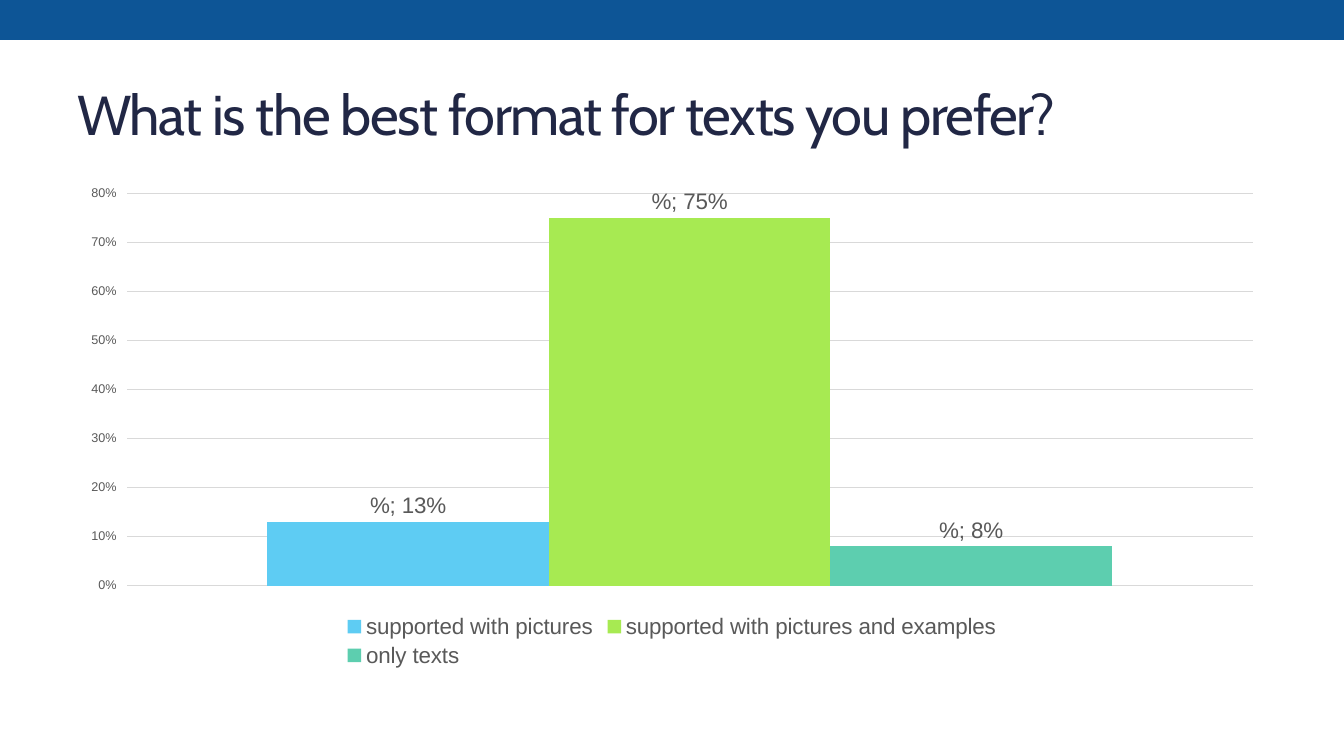
from dataclasses import dataclass

from lxml import etree
from pptx import Presentation
from pptx import util as u
from pptx.chart import data as chart_data
from pptx.dml.color import RGBColor
from pptx.enum import chart as ch
from pptx.enum import shapes, text
from pptx.oxml.ns import qn

EMU_PER_PX = 9525


@dataclass(frozen=True)
class Theme:
    band: str = "0D5596"
    title: str = "212745"
    label: str = "595959"
    grid: str = "D9D9D9"
    title_font: str = "Cabin"
    chart_font: str = "Arial"
    title_size: int = 40
    label_size: int = 16
    axis_size: int = 9


THEME = Theme()
ANSWERS = [
    ("supported with pictures", 0.13, "5ECCF3"),
    ("supported with pictures and examples", 0.75, "A7EA52"),
    ("only texts", 0.08, "5DCEAF"),
]


def px(*lengths):
    return [u.Emu(length * EMU_PER_PX) for length in lengths]


def set_font(font, name, size, color):
    font.name = name
    font.size = u.Pt(size)
    font.color.rgb = RGBColor.from_string(color)


def set_chart_font(font, size):
    set_font(font, THEME.chart_font, size, THEME.label)


def add_band(page, box):
    band = page.shapes.add_shape(shapes.MSO_SHAPE.RECTANGLE, *px(*box))
    band.shadow.inherit = False
    band.fill.solid()
    band.fill.fore_color.rgb = RGBColor.from_string(THEME.band)
    band.line.fill.background()


def add_title(page, box, wording):
    frame = page.shapes.add_textbox(*px(*box)).text_frame
    frame.word_wrap = True
    frame.vertical_anchor = text.MSO_ANCHOR.MIDDLE
    para = frame.paragraphs[0]
    span = para.add_run()
    span.text = wording
    set_font(para.font, THEME.title_font, THEME.title_size, THEME.title)
    # Tighten the letters by one point
    span._r.get_or_add_rPr().set("spc", "-100")


def style_axes(chart):
    chart.category_axis.visible = False
    axis = chart.value_axis
    axis.minimum_scale, axis.maximum_scale, axis.major_unit = 0, 0.8, 0.1
    axis.major_tick_mark = ch.XL_TICK_MARK.OUTSIDE
    axis.format.line.fill.background()
    axis.tick_labels.number_format = "0%"
    axis.tick_labels.number_format_is_linked = False
    set_chart_font(axis.tick_labels.font, THEME.axis_size)
    grid = axis.major_gridlines.format.line
    grid.color.rgb = RGBColor.from_string(THEME.grid)
    grid.width = u.Pt(0.75)


def style_series(series, color):
    series.format.fill.solid()
    series.format.fill.fore_color.rgb = RGBColor.from_string(color)
    labels = series.data_labels
    labels.show_value = labels.show_category_name = True
    labels.number_format = "0%"
    labels.number_format_is_linked = False
    labels.position = ch.XL_LABEL_POSITION.OUTSIDE_END
    set_chart_font(labels.font, THEME.label_size)
    # Separator between category and value
    separator = etree.Element(qn("c:separator"))
    separator.text = "; "
    labels._element.find(qn("c:showBubbleSize")).addnext(separator)


def add_answer_chart(page, box):
    data = chart_data.CategoryChartData(number_format="0%")
    data.categories = ["%"]
    for name, share, _ in ANSWERS:
        data.add_series(name, [share])
    chart = page.shapes.add_chart(
        ch.XL_CHART_TYPE.COLUMN_CLUSTERED, *px(*box), data).chart
    chart.has_title = False
    set_chart_font(chart.font, THEME.label_size)
    style_axes(chart)

    # Columns
    plot = chart.plots[0]
    plot.gap_width, plot.overlap = 100, 0
    plot.vary_by_categories = False
    for series, (_, _, color) in zip(plot.series, ANSWERS):
        style_series(series, color)

    # Legend
    chart.has_legend = True
    chart.legend.position = ch.XL_LEGEND_POSITION.BOTTOM
    chart.legend.include_in_layout = False
    set_chart_font(chart.legend.font, THEME.label_size)


def main():
    deck = Presentation()
    deck.slide_width, deck.slide_height = px(1280, 720)
    page = deck.slides.add_slide(deck.slide_layouts[6])
    add_band(page, (0, 0, 1280, 38))
    add_title(page, (64, 56, 1152, 104),
              "What is the best format for texts you prefer?")
    add_answer_chart(page, (64, 168, 1152, 472))
    deck.save("out.pptx")


if __name__ == "__main__":
    main()
